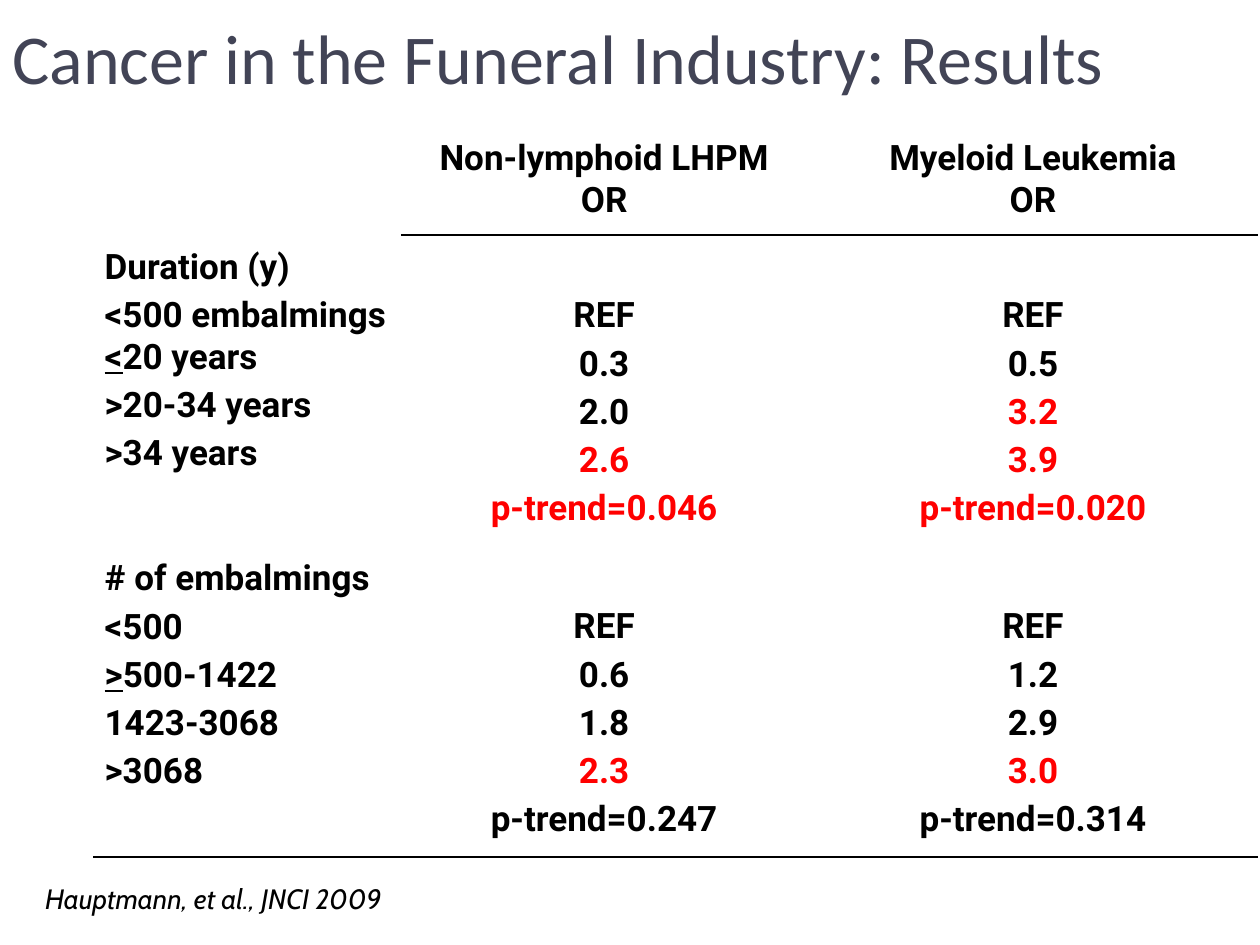
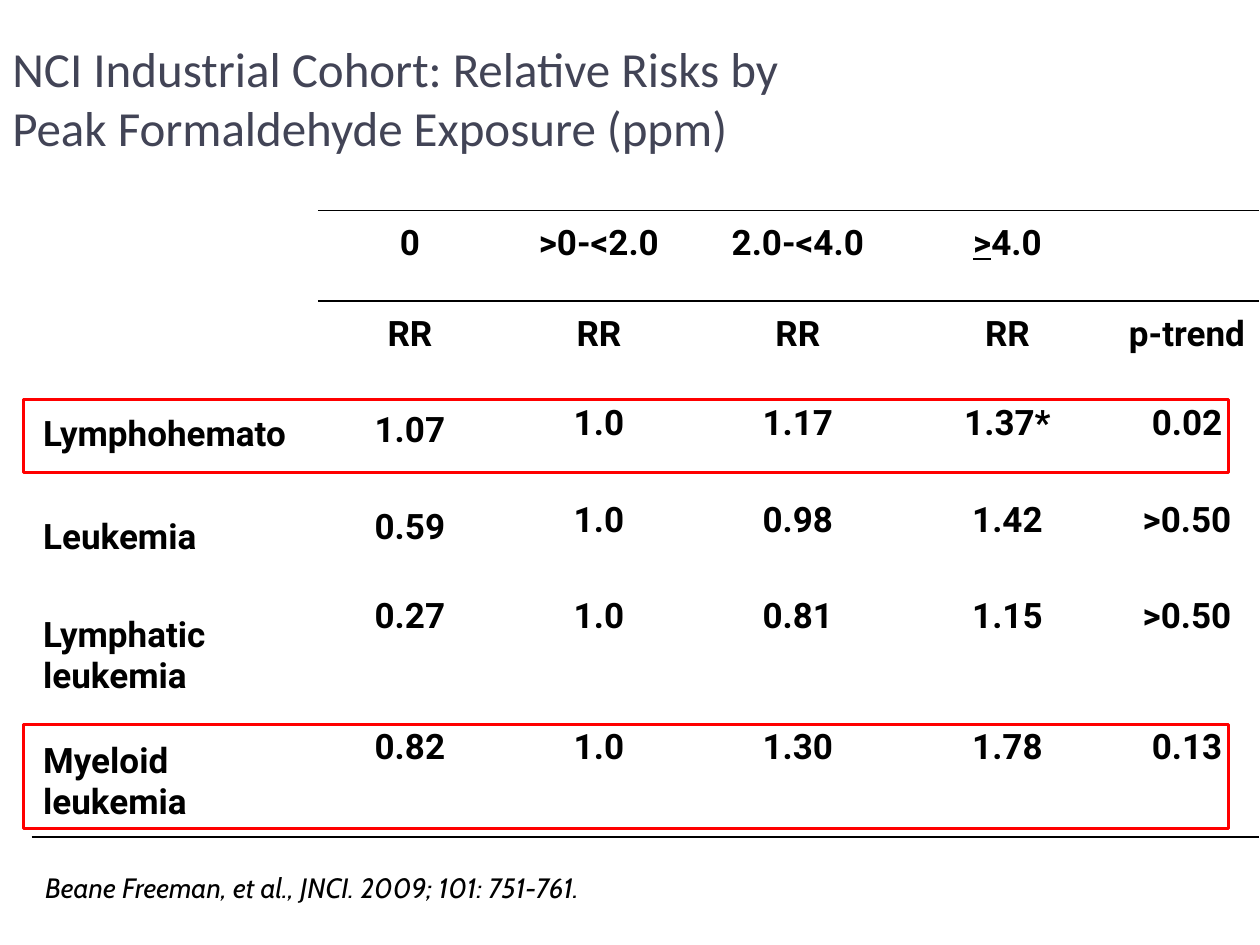
from lxml import etree
from pptx import Presentation
from pptx.dml.color import RGBColor
from pptx.enum.shapes import MSO_SHAPE
from pptx.enum.text import MSO_ANCHOR, PP_ALIGN
from pptx.oxml.ns import qn
from pptx.util import Cm, Pt

LEFT, MID = PP_ALIGN.LEFT, PP_ALIGN.CENTER
CENTER, TOP = MSO_ANCHOR.MIDDLE, MSO_ANCHOR.TOP
RECT = MSO_SHAPE.RECTANGLE

THEME = {
    "ink": RGBColor(0, 0, 0),
    "red": RGBColor(0xFF, 0, 0),
    "head": RGBColor(0x42, 0x44, 0x56),
    "body": {"name": "Roboto", "size": Pt(20), "bold": True},
    "cite": {"name": "Cabin", "size": Pt(16), "italic": True},
    "rule": Pt(1),
    "frame": Pt(1.75),
    "gap": 4,
}
PAD = {"margin_left": Cm(0.23), "margin_right": Cm(0.23),
       "margin_top": Cm(0.25), "margin_bottom": Cm(0.25)}
DROP = Cm(1.22)

# Text marks: "_" switches underline, a leading "!" makes a line red.
RESULTS = {
    "title": ("Cancer in the Funeral Industry: Results", 40, 2.26),
    "cite": ("Hauptmann, et al., JNCI 2009", 17.65),
    "at": (1.88, 2.54),
    "cols": (6.2, 8.2, 9.09),
    "rows": (2.16, 6.17, 6.2),
    "rules": {1: (1, 2), 3: (0, 1, 2)},
    "cells": [
        [[], ["Non-lymphoid LHPM\nOR"], ["Myeloid Leukemia\nOR"]],
        [["Duration (y)", "<500 embalmings _<_20 years", ">20-34 years", ">34 years"],
         ["REF", "0.3", "2.0", "!2.6", "!p-trend=0.046"],
         ["REF", "0.5", "!3.2", "!3.9", "!p-trend=0.020"]],
        [["# of embalmings", "<500", "_>_500-1422", "1423-3068", ">3068"],
         ["REF", "0.6", "1.8", "!2.3", "p-trend=0.247"],
         ["REF", "1.2", "2.9", "!3.0", "p-trend=0.314"]],
    ],
}
DOSES = ["0", ">0-<2.0", "2.0-<4.0", "_>_4.0", ""]
RISKS = [
    ["RR", "1.07", "0.59", "0.27", "0.82"],
    ["RR", "1.0", "1.0", "1.0", "1.0"],
    ["RR", "1.17", "0.98", "0.81", "1.30"],
    ["RR", "1.37*", "1.42", "1.15", "1.78"],
    ["p-trend", "0.02", ">0.50", ">0.50", "0.13"],
]
TYPES = ["Lymphohemato", "Leukemia", "Lymphatic leukemia", "Myeloid leukemia"]
FIRST = (0, 31.5, 32, 27.5, 51)
STEPS = (0, 27.5, 32, 31.5, 51)
COHORT = {
    "title": ("NCI Industrial Cohort: Relative Risks by\nPeak Formaldehyde Exposure (ppm)",
              28, 3.94),
    "cite": ("Beane Freeman, et al., JNCI. 2009; 101: 751-761.", 17.42),
    "at": (0.64, 4.24),
    "cols": (5.77, 3.71, 3.91, 4.11, 4.34, 2.9),
    "rows": (1.83, 2.03, 2.08, 1.96, 2.54, 2.16),
    "rules": {0: range(1, 6), 1: range(1, 6), 6: range(6)},
    "cells": [[[]] + [[dose] if dose else [] for dose in DOSES],
              [[]] + RISKS] + [[[kind]] for kind in TYPES],
}
FRAMES = [(8.05, 1.47), (14.6, 2.11)]


def dress(item, form):
    for key, value in form.items():
        setattr(item, key, value)


def write(frame, lines, font, color, align=LEFT, gaps=None):
    for i, line in enumerate(lines):
        para = frame.paragraphs[0] if i == 0 else frame.add_paragraph()
        para.alignment = align
        para.space_before = Pt(gaps[i] if gaps else THEME["gap"] * (i > 0))
        tone = THEME["red"] if line.startswith("!") else color
        for j, row in enumerate(line.lstrip("!").split("\n")):
            if j:
                para.add_line_break()
            for k, part in enumerate(row.split("_")):
                if part:
                    run = para.add_run()
                    run.text = part
                    dress(run.font, {**font, "underline": k % 2 == 1})
                    run.font.color.rgb = tone


def label(slide, box, text, font, color, anchor):
    frame = slide.shapes.add_textbox(*map(Cm, box)).text_frame
    dress(frame, {"word_wrap": True, "vertical_anchor": anchor})
    write(frame, [text], font, color)


def edge(cell, tags):
    props = cell._tc.get_or_add_tcPr()
    for i, (tag, shown) in enumerate(tags.items()):
        line = etree.Element(qn("a:" + tag), w=str(THEME["rule"]))
        if shown:
            fill = etree.SubElement(line, qn("a:solidFill"))
            etree.SubElement(fill, qn("a:srgbClr"), val=str(THEME["ink"]))
        else:
            etree.SubElement(line, qn("a:noFill"))
        props.insert(i, line)


def grid(slide, data, merge=False):
    cols, rows, rules = data["cols"], data["rows"], data["rules"]
    box = (*data["at"], sum(cols), sum(rows))
    table = slide.shapes.add_table(len(rows), len(cols), *map(Cm, box)).table
    dress(table, {"first_row": False, "horz_banding": False})
    for col, size in zip(table.columns, cols):
        col.width = Cm(size)
    for row, size in zip(table.rows, rows):
        row.height = Cm(size)
    if merge:
        for c in range(1, len(cols)):
            table.cell(1, c).merge(table.cell(len(rows) - 1, c))
    for r in range(len(rows)):
        for c in range(len(cols)):
            cell = table.cell(r, c)
            cell.fill.background()
            dress(cell, PAD)
            end = r + cell.span_height
            edge(cell, {"lnL": False, "lnR": False,
                        "lnT": c in rules.get(r, ()), "lnB": c in rules.get(end, ())})
            if c >= len(data["cells"][r]):
                continue
            lines, gaps = data["cells"][r][c], None
            if merge and len(lines) > 1:
                gaps = FIRST if c == 1 else STEPS
            elif r and c:
                cell.margin_top = DROP
            write(cell.text_frame, lines, THEME["body"], THEME["ink"],
                  MID if c else LEFT, gaps)


def page(deck, data, merge=False):
    slide = deck.slides.add_slide(deck.slide_layouts[6])
    text, size, high = data["title"]
    label(slide, (0, 0, 25.4, high), text, {"name": "Calibri", "size": Pt(size)},
          THEME["head"], CENTER)
    grid(slide, data, merge)
    text, top = data["cite"]
    label(slide, (0.66, top, 17.5, 1), text, THEME["cite"], THEME["ink"], TOP)
    return slide


def main():
    deck = Presentation()
    dress(deck, {"slide_width": Cm(25.4), "slide_height": Cm(19.05)})
    page(deck, RESULTS)
    slide = page(deck, COHORT, True)
    for top, high in FRAMES:
        frame = slide.shapes.add_shape(RECT, Cm(0.48), Cm(top), Cm(24.28), Cm(high))
        frame.shadow.inherit = False
        frame.fill.background()
        frame.line.color.rgb = THEME["red"]
        frame.line.width = THEME["frame"]
    deck.save("out.pptx")


if __name__ == "__main__":
    main()
